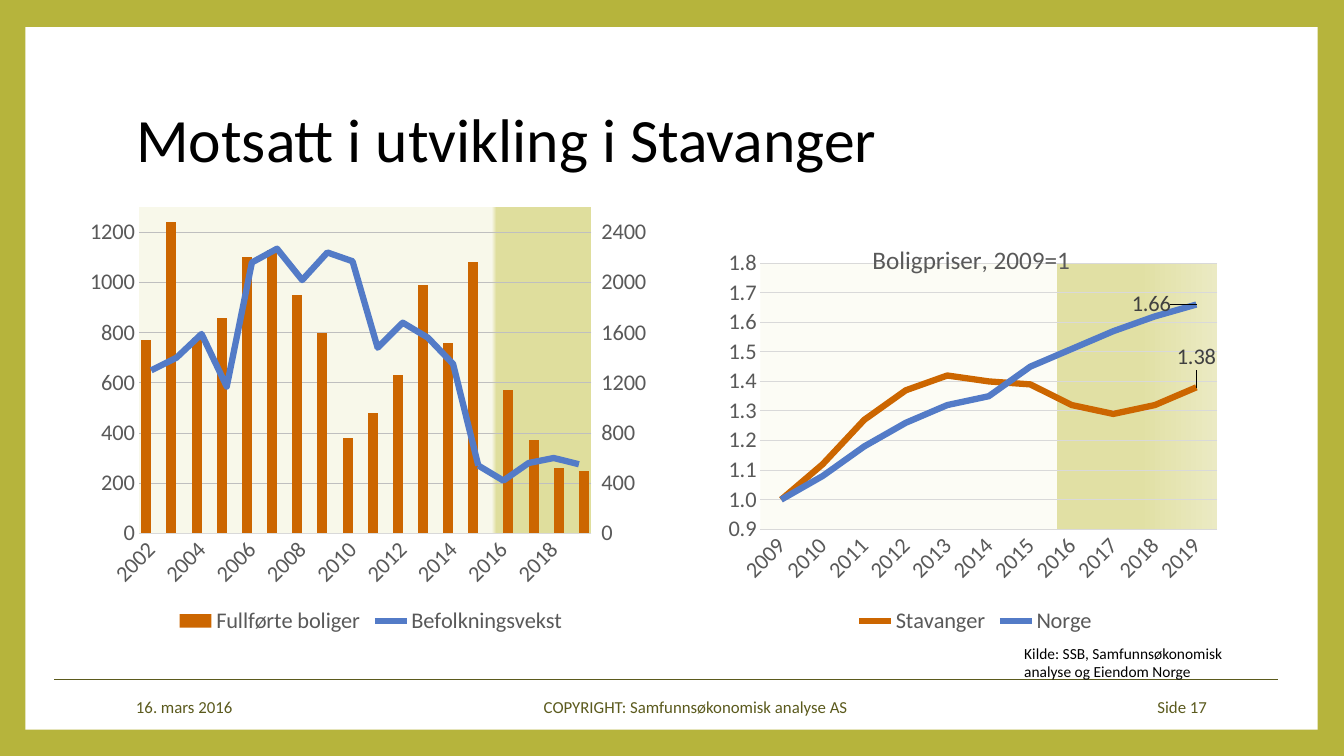
from copy import deepcopy
from typing import NamedTuple

from pptx import Presentation
from pptx.chart.axis import CategoryAxis, ValueAxis
from pptx.chart.data import CategoryChartData
from pptx.dml.color import RGBColor
from pptx.enum.chart import XL_CHART_TYPE as ChartType, XL_LABEL_POSITION as LabelPos
from pptx.enum.chart import XL_LEGEND_POSITION as LegendPos, XL_MARKER_STYLE as Marker
from pptx.enum.chart import XL_TICK_MARK as Tick
from pptx.enum.shapes import MSO_CONNECTOR as Connector, MSO_SHAPE as Preset
from pptx.enum.text import MSO_ANCHOR as Anchor, PP_ALIGN as Align
from pptx.oxml import parse_xml
from pptx.oxml.ns import nsdecls, qn
from pptx.util import Inches, Pt

WIDTH, HEIGHT = Inches(13.33), Inches(7.5)
OLIVE, DARK_OLIVE, WHITE, BLACK = "B6B43C", "5B5A1D", "FFFFFF", "000000"
GREY, LABEL_GREY, PALE_GREY, GRID_GREY = "595959", "404040", "D9D9D9", "BFBFBF"
ORANGE, BLUE = "CC6600", "537BC7"


class Series(NamedTuple):
    name: str
    values: list
    hue: str


class Note(NamedTuple):
    text: str
    area: tuple
    size: int = 12
    hue: str = DARK_OLIVE
    align: Align = Align.LEFT
    anchor: Anchor = Anchor.MIDDLE
    wrap: bool = True


NOTES = [
    Note("16. mars 2016", (9.38, 90.8, 19.13, 5.33)),
    Note("COPYRIGHT: Samfunnsøkonomisk analyse AS", (32.41, 90.8, 38.71, 5.33), align=Align.CENTER),
    Note("Side 17", (76.52, 90.8, 14.03, 5.33), align=Align.RIGHT),
    Note("Kilde: SSB, Samfunnsøkonomisk\nanalyse og Eiendom Norge", (75.47, 84.53, 17.1, 6.27),
         11, BLACK, anchor=Anchor.TOP, wrap=False),
]
HOUSING = [
    Series("Fullførte boliger", [770, 1240, 780, 860, 1100, 1130, 950, 800, 380, 480, 630, 990,
                                 760, 1080] + [None] * 4, ORANGE),
    Series("Series 2", [None] * 14 + [570, 370, 260, 250], ORANGE),
    Series("Befolkningsvekst", [1300, 1400, 1590, 1170, 2160, 2270, 2020, 2240, 2170, 1480, 1680,
                                1560, 1350, 540] + [None] * 4, BLUE),
    Series("Series 4", [None] * 13 + [540, 420, 560, 600, 550], BLUE),
]
PRICES = [
    Series("Stavanger", [1, 1.12, 1.27, 1.37, 1.42, 1.4, 1.39, 1.32, 1.29, 1.32, 1.38], ORANGE),
    Series("Norge", [1, 1.08, 1.18, 1.26, 1.32, 1.35, 1.45, 1.51, 1.57, 1.62, 1.66], BLUE),
]
LEADER_LINES = ('<c:ext uri="{CE6537A1-D6FC-4f65-9D91-7224C49458BB}" xmlns:c15="http://schemas.'
                'microsoft.com/office/drawing/2012/chart"><c15:showLeaderLines val="1"/></c:ext>')


def color(value: str) -> RGBColor:
    return RGBColor.from_string(value)


def share(*percents: float) -> list[int]:
    return [round((WIDTH, HEIGHT)[i % 2] * part / 100) for i, part in enumerate(percents)]


def paint(fill, hue: str) -> None:
    fill.solid()
    fill.fore_color.rgb = color(hue)


def style_stroke(line, hue: str, width: float) -> None:
    line.color.rgb = color(hue)
    line.width = Pt(width)


def style_font(font, size: float, hue: str) -> None:
    font.name, font.size, font.bold = "Calibri", Pt(size), False
    font.color.rgb = color(hue)


def write(frame, text: str, *, size: float, hue: str, align=Align.LEFT, anchor=Anchor.MIDDLE,
          wrap=True, spacing=None) -> None:
    frame.text, frame.word_wrap, frame.vertical_anchor = text, wrap, anchor
    for paragraph in frame.paragraphs:
        paragraph.alignment, paragraph.line_spacing = align, spacing
        for run in paragraph.runs:
            style_font(run.font, size, hue)


def chart_xml(tag: str, inner: str = "", **attributes: str):
    element = parse_xml(f'<c:{tag} {nsdecls("c", "a")}>{inner}</c:{tag}>')
    for key, value in attributes.items():
        element.set(key, value)
    return element


def set_layout(parent, index: int, mode: str, **shares: float) -> None:
    for old in parent.findall(qn("c:layout")):
        parent.remove(old)
    sizes = "".join(f'<c:{key} val="{value}"/>' for key, value in shares.items())
    parent.insert(index, chart_xml("layout", f"<c:manualLayout>{mode}{sizes}</c:manualLayout>"))


EDGE = '<c:xMode val="edge"/><c:yMode val="edge"/>'
INNER = '<c:layoutTarget val="inner"/>' + EDGE


def paint_plot(plot_area, stops: list, angle: int) -> None:
    marks = "".join(f'<a:gs pos="{at * 1000}"><a:srgbClr val="{hue}"/></a:gs>' for at, hue in stops)
    plot_area.append(chart_xml("spPr", f'<a:gradFill><a:gsLst>{marks}</a:gsLst>'
                               f'<a:lin ang="{angle * 60000}" scaled="0"/></a:gradFill>'))


def style_line(line, hue: str) -> None:
    line.smooth, line.marker.style = False, Marker.NONE
    style_stroke(line.format.line, hue, 4.5)


def build_chart(slide, kind, area: tuple, years: range, series: list, *, value_format: str,
                scale: tuple, grid: tuple, axis_format: str):
    data = CategoryChartData(number_format=value_format)
    data.categories = [str(year) for year in years]
    for entry in series:
        data.add_series(entry.name, entry.values)
    chart = slide.shapes.add_chart(kind, *share(*area), data).chart
    style_font(chart.font, 16, BLACK)
    chart.has_title, chart.has_legend = False, True
    chart.legend.position, chart.legend.include_in_layout = LegendPos.BOTTOM, False
    style_font(chart.legend.font, 16, GREY)
    values = chart.value_axis
    for axis in (chart.category_axis, values):
        axis.major_tick_mark = axis.minor_tick_mark = Tick.NONE
        style_font(axis.tick_labels.font, 16, GREY)
    style_stroke(chart.category_axis.format.line, PALE_GREY, 0.75)
    values.format.line.fill.background()
    values.minimum_scale, values.maximum_scale, values.major_unit = scale
    style_stroke(values.major_gridlines.format.line, *grid)
    values.tick_labels.number_format = axis_format
    values.tick_labels.number_format_is_linked = False
    plot_area = chart.element.find(".//" + qn("c:plotArea"))
    plot_area.find(f'{qn("c:catAx")}/{qn("c:txPr")}/{qn("a:bodyPr")}').set("rot", "-2700000")
    chart.element.find(qn("c:chart")).addnext(chart_xml(
        "spPr", f'<a:solidFill><a:srgbClr val="{WHITE}"/></a:solidFill><a:ln><a:noFill/></a:ln>'))
    return chart, plot_area


def move_to_right_axis(plot_area, first: int, high: float, step: float) -> None:
    bars, years, values = (plot_area.find(qn(tag)) for tag in ("c:barChart", "c:catAx", "c:valAx"))
    lines = chart_xml("lineChart", '<c:grouping val="standard"/><c:varyColors val="0"/>'
                      '<c:marker val="1"/><c:axId val="501"/><c:axId val="502"/>')
    for offset, growth in enumerate(bars.findall(qn("c:ser"))[first:]):
        for flag in growth.findall(qn("c:invertIfNegative")):
            growth.remove(flag)
        lines.insert(2 + offset, growth)
    bars.addnext(lines)
    right_years, right_values = deepcopy(years), deepcopy(values)
    for axis, own, other in ((right_years, "501", "502"), (right_values, "502", "501")):
        axis.find(qn("c:axId")).set("val", own)
        axis.find(qn("c:crossAx")).set("val", other)
        values.addnext(axis)
    right_values.find(qn("c:axPos")).set("val", "r")
    right_values.find(qn("c:crosses")).set("val", "max")
    CategoryAxis(right_years).visible = False
    right = ValueAxis(right_values)
    right.has_major_gridlines, right.major_tick_mark = False, Tick.OUTSIDE
    right.maximum_scale, right.major_unit = high, step


def add_housing_chart(slide) -> None:
    chart, plot_area = build_chart(
        slide, ChartType.COLUMN_CLUSTERED, (6, 26.27, 43.2, 58.27), range(2002, 2020), HOUSING,
        value_format="0", scale=(0, 1300, 200), grid=(GRID_GREY, 0.5), axis_format="0")
    plot_area.find(f'{qn("c:catAx")}/{qn("c:noMultiLvlLbl")}').addprevious(
        chart_xml("tickLblSkip", val="2"))
    move_to_right_axis(plot_area, 2, 2600, 400)
    bars, lines = chart.plots
    bars.gap_width, bars.overlap, bars.vary_by_categories = 52, 0, False
    for column, entry in zip(bars.series, HOUSING[:2]):
        paint(column.format.fill, entry.hue)
    for line, entry in zip(lines.series, HOUSING[2:]):
        style_line(line, entry.hue)
    for hidden in (3, 1):
        chart.element.find(".//" + qn("c:legendPos")).addnext(
            chart_xml("legendEntry", f'<c:idx val="{hidden}"/><c:delete val="1"/>'))
    set_layout(plot_area, 0, INNER, x=0.1, y=0.02, w=0.78, h=0.74)
    paint_plot(plot_area, [(21, "DFDE9D"), (22, "F8F8EA")], 180)


def add_price_chart(slide) -> None:
    chart, plot_area = build_chart(
        slide, ChartType.LINE, (52.58, 28.67, 39.98, 55.87), range(2009, 2020), PRICES,
        value_format="0.00", scale=(0.9, 1.8, 0.1), grid=(PALE_GREY, 0.75), axis_format="0.0")
    chart.plots[0].vary_by_categories = False
    end_labels = [(LabelPos.ABOVE, 0, -0.03), (LabelPos.LEFT, -0.04, 0)]
    for line, entry, (position, _, _) in zip(chart.plots[0].series, PRICES, end_labels):
        style_line(line, entry.hue)
        line.data_labels.show_value = False
        label = line.points[len(entry.values) - 1].data_label
        style_font(label.font, 16, LABEL_GREY)
        label.position = position
    for mark, (_, shift_x, shift_y) in zip(list(plot_area.iter(qn("c:dLbl"))), end_labels):
        set_layout(mark, 1, "", x=shift_x, y=shift_y)
        mark.getparent().append(chart_xml("extLst", LEADER_LINES))
    chart.has_title = True
    write(chart.chart_title.text_frame, "Boligpriser, 2009=1", size=18, hue=GREY, align=Align.CENTER)
    set_layout(chart.element.find(".//" + qn("c:title")), 1, EDGE, x=0.3, y=0.05)
    set_layout(plot_area, 0, INNER, x=0.1, y=0.11, w=0.85, h=0.63)
    paint_plot(plot_area, [(0, "FCFCF5"), (65, "FCFCF5"), (65, "E1E0A4"), (83, "E1E0A4"),
                           (100, "EBEAC3")], 0)


def add_frame(slide) -> None:
    paint(slide.background.fill, OLIVE)
    panel = slide.shapes.add_shape(Preset.RECTANGLE, *share(1.88, 3.6, 96.15, 92.93))
    panel.shadow.inherit = False
    paint(panel.fill, WHITE)
    panel.line.fill.background()
    rule = slide.shapes.add_connector(Connector.STRAIGHT, *share(4.05, 89.87, 95.12, 89.87))
    style_stroke(rule.line, DARK_OLIVE, 0.5)
    rule.element.spPr.append(parse_xml(f'<a:effectLst {nsdecls("a")}/>'))


def add_texts(slide) -> None:
    title = slide.shapes.title
    title.left, title.top, title.width, title.height = share(9.38, 8.93, 81.02, 19.73)
    write(title.text_frame, "Motsatt i utvikling i Stavanger", size=44, hue=BLACK, spacing=0.9)
    title.element.getparent().append(title.element)
    for note in NOTES:
        frame = slide.shapes.add_textbox(*share(*note.area)).text_frame
        write(frame, note.text, size=note.size, hue=note.hue, align=note.align,
              anchor=note.anchor, wrap=note.wrap)


deck = Presentation()
deck.slide_width, deck.slide_height = WIDTH, HEIGHT
stavanger = deck.slides.add_slide(deck.slide_layouts[5])
for add_part in (add_frame, add_texts, add_housing_chart, add_price_chart):
    add_part(stavanger)
deck.save("out.pptx")
